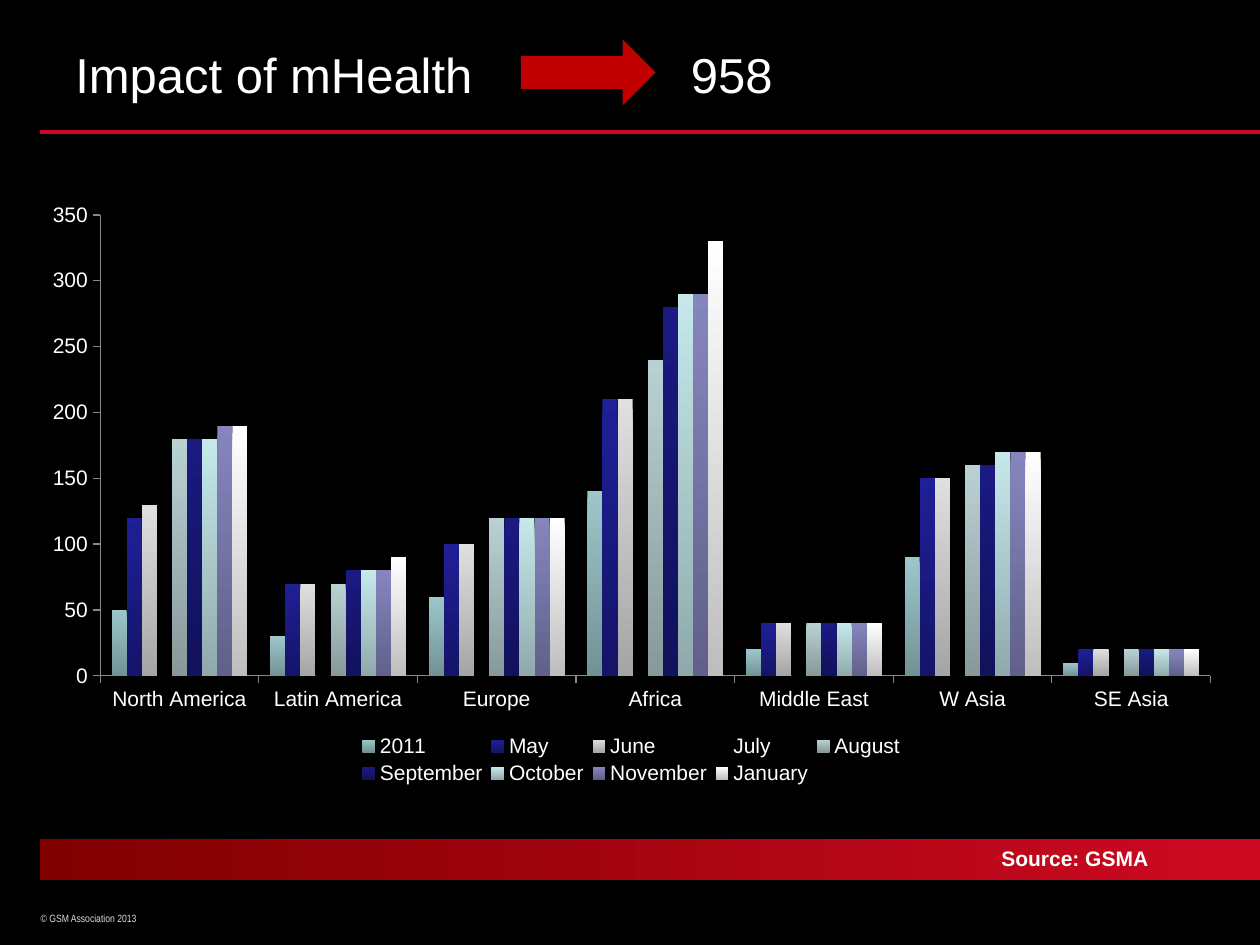
"""Build the mHealth impact slide with its regional column chart."""
from lxml import etree
from pptx import Presentation
from pptx import util as u
from pptx.chart import data
from pptx.dml.color import RGBColor
from pptx.enum import chart as charts, shapes, text
from pptx.oxml import ns

BLACK = RGBColor(0x00, 0x00, 0x00)
WHITE = RGBColor(0xFF, 0xFF, 0xFF)
PALE = RGBColor(0xDD, 0xDD, 0xDD)
AXIS_GREY = RGBColor(0x88, 0x88, 0x88)
ARROW_RED = RGBColor(0xC0, 0x00, 0x00)
DARK_RED = RGBColor(0x80, 0x00, 0x00)
RED = RGBColor(0xCD, 0x09, 0x21)
TEAL = RGBColor(0x9C, 0xC6, 0xCA)
TEAL_DARK = RGBColor(0x72, 0x93, 0x95)
NAVY = RGBColor(0x1F, 0x1F, 0x96)
NAVY_DARK = RGBColor(0x14, 0x14, 0x69)
SILVER = RGBColor(0xDF, 0xDF, 0xDF)
SILVER_DARK = RGBColor(0xA5, 0xA5, 0xA5)
MIST = RGBColor(0xBA, 0xD1, 0xD3)
MIST_DARK = RGBColor(0x88, 0x99, 0x9A)
INDIGO = RGBColor(0x1A, 0x1A, 0x82)
INDIGO_DARK = RGBColor(0x11, 0x11, 0x5C)
ICE = RGBColor(0xC6, 0xE8, 0xEA)
ICE_DARK = RGBColor(0x90, 0xAA, 0xAC)
LILAC = RGBColor(0x86, 0x86, 0xBE)
LILAC_DARK = RGBColor(0x60, 0x60, 0x8A)
SNOW_DARK = RGBColor(0xBE, 0xBE, 0xBE)

REGIONS = ["North America", "Latin America", "Europe", "Africa",
           "Middle East", "W Asia", "SE Asia"]
SERIES = [
    ("2011", (50, 30, 60, 140, 20, 90, 10), TEAL, TEAL_DARK),
    ("May", (120, 70, 100, 210, 40, 150, 20), NAVY, NAVY_DARK),
    ("June", (130, 70, 100, 210, 40, 150, 20), SILVER, SILVER_DARK),
    ("July", (170, 70, 110, 240, 40, 150, 20), BLACK, BLACK),
    ("August", (180, 70, 120, 240, 40, 160, 20), MIST, MIST_DARK),
    ("September", (180, 80, 120, 280, 40, 160, 20), INDIGO, INDIGO_DARK),
    ("October", (180, 80, 120, 290, 40, 170, 20), ICE, ICE_DARK),
    ("November", (190, 80, 120, 290, 40, 170, 20), LILAC, LILAC_DARK),
    ("January", (190, 90, 120, 330, 40, 170, 20), WHITE, SNOW_DARK),
]


def set_all(target, values):
    """Set each named attribute of the target."""
    for name, value in values.items():
        setattr(target, name, value)


def set_font(font, color, **values):
    """Apply a colour and further values to a font."""
    font.color.rgb = color
    set_all(font, values)


def place(box, left, top, width, height):
    """Move and size a box in centimetres."""
    set_all(box, {"left": u.Cm(left), "top": u.Cm(top),
                  "width": u.Cm(width), "height": u.Cm(height)})


def set_bullet(para, bullet):
    """Give a paragraph a small red bullet, or none, without indent."""
    properties = para._p.get_or_add_pPr()
    for name in ("marL", "indent"):
        properties.set(name, "0")
    if not bullet:
        etree.SubElement(properties, ns.qn("a:buNone"))
        return
    color = etree.SubElement(properties, ns.qn("a:buClr"))
    etree.SubElement(color, ns.qn("a:srgbClr"), val=str(RED))
    etree.SubElement(properties, ns.qn("a:buSzPct"), val="50000")
    etree.SubElement(properties, ns.qn("a:buChar"), char=bullet)


def write(box, spans, color, bullet=None, left_inset=0.25, **font):
    """Write one left-aligned line of (words, letter spacing) spans."""
    frame = box.text_frame
    set_all(frame, {"word_wrap": True, "auto_size": text.MSO_AUTO_SIZE.NONE,
                    "vertical_anchor": text.MSO_ANCHOR.TOP,
                    "margin_left": u.Cm(left_inset)})
    para = frame.paragraphs[0]
    set_all(para, {"alignment": text.PP_ALIGN.LEFT, "space_before": u.Pt(0)})
    set_bullet(para, bullet)
    for words, spacing in spans:
        span = para.add_run()
        span.text = words
        set_font(span.font, color, **font)
        if spacing:
            span._r.get_or_add_rPr().set("spc", str(spacing * 100))


def fade(fill, first, last, angle):
    """Fill with a two-colour gradient."""
    fill.gradient()
    fill.gradient_angle = angle
    for stop, color, position in zip(fill.gradient_stops, (first, last), (0, 1)):
        set_all(stop, {"position": position})
        stop.color.rgb = color


def add_block(page, kind, *area):
    """Add a preset shape without outline or shadow."""
    block = page.shapes.add_shape(kind, *(u.Cm(length) for length in area))
    block.shadow.inherit = False
    block.line.fill.background()
    return block


def add_rule(page, left, right, height):
    """Add the horizontal red rule."""
    rule = page.shapes.add_connector(shapes.MSO_CONNECTOR.STRAIGHT, u.Cm(left),
                                     u.Cm(height), u.Cm(right), u.Cm(height))
    rule.line.color.rgb = RED
    rule.line.width = u.Pt(2.25)
    etree.SubElement(rule._element.spPr, ns.qn("a:effectLst"))


def make_layout(left, top, width, height, inner=False):
    """Return a manual chart layout given in fractions of the chart."""
    layout = etree.Element(ns.qn("c:layout"))
    manual = etree.SubElement(layout, ns.qn("c:manualLayout"))
    values = {"layoutTarget": "inner"} if inner else {}
    values.update(xMode="edge", yMode="edge", x=left, y=top, w=width, h=height)
    for name, value in values.items():
        etree.SubElement(manual, ns.qn(f"c:{name}"), val=str(value))
    return layout


def arrange(chart):
    """Fix the places of the plot and the legend."""
    plot_area = chart._chartSpace.chart.plotArea
    legend = chart.legend._element
    for parent in (plot_area, legend):
        for old in parent.findall(ns.qn("c:layout")):
            parent.remove(old)
    plot_area.insert(0, make_layout(0.06, 0.04, 0.92, 0.77, inner=True))
    legend.find(ns.qn("c:legendPos")).addnext(make_layout(0.27, 0.9, 0.46, 0.1))


def add_columns(page, *area):
    """Add the clustered column chart of all regions."""
    numbers = data.CategoryChartData()
    numbers.categories = REGIONS
    for name, values, _, _ in SERIES:
        numbers.add_series(name, values)
    chart = page.shapes.add_chart(charts.XL_CHART_TYPE.COLUMN_CLUSTERED,
                                  *(u.Cm(length) for length in area), numbers).chart
    set_all(chart, {"has_title": False, "has_legend": True})
    set_font(chart.font, WHITE, name="Arial", size=u.Pt(12))
    set_all(chart.legend, {"position": charts.XL_LEGEND_POSITION.BOTTOM,
                           "include_in_layout": False})
    for axis in (chart.category_axis, chart.value_axis):
        set_all(axis, {"has_major_gridlines": False,
                       "major_tick_mark": charts.XL_TICK_MARK.OUTSIDE})
        axis.format.line.color.rgb = AXIS_GREY
    set_all(chart.value_axis, {"minimum_scale": 0, "maximum_scale": 350,
                               "major_unit": 50})
    plot = chart.plots[0]
    set_all(plot, {"gap_width": 150, "overlap": 0, "vary_by_categories": False})
    for series, (_, _, first, last) in zip(plot.series, SERIES):
        fade(series.format.fill, first, last, 270)
    arrange(chart)


def main():
    """Build and save the deck."""
    deck = Presentation()
    set_all(deck, {"slide_width": u.Cm(25.4), "slide_height": u.Cm(19.05)})
    page = deck.slides.add_slide(deck.slide_layouts[1])
    page.background.fill.solid()
    page.background.fill.fore_color.rgb = BLACK

    notice = page.shapes.add_textbox(0, 0, 0, 0)
    place(notice, 0.79, 18.26, 3.96, 0.5)
    write(notice, [("© GSM Association 2013", 0)], PALE, left_inset=0.03,
          name="Arial Narrow", size=u.Pt(6))

    band = add_block(page, shapes.MSO_SHAPE.RECTANGLE, 0.8, 16.92, 24.6, 0.82)
    fade(band.fill, DARK_RED, RED, 0)
    add_rule(page, 0.8, 25.4, 2.67)

    title, source = page.placeholders
    place(title, 1.27, 0.76, 22.86, 1.93)
    write(title, [("Impact of mHealth", 0), (" ", 117), ("958", 0)], WHITE,
          name="Arial", size=u.Pt(28))

    add_columns(page, 0.56, 3.85, 24.33, 12.07)

    arrow = add_block(page, shapes.MSO_SHAPE.RIGHT_ARROW, 10.5, 0.79, 2.72, 1.34)
    arrow.fill.solid()
    arrow.fill.fore_color.rgb = ARROW_RED

    place(source, 19.81, 16.92, 7.29, 0.51)
    write(source, [("Source: GSMA", 0)], WHITE, bullet="■",
          name="Arial", size=u.Pt(12), bold=True)
    page.shapes._spTree.append(source._element)

    deck.save("out.pptx")


if __name__ == "__main__":
    main()
